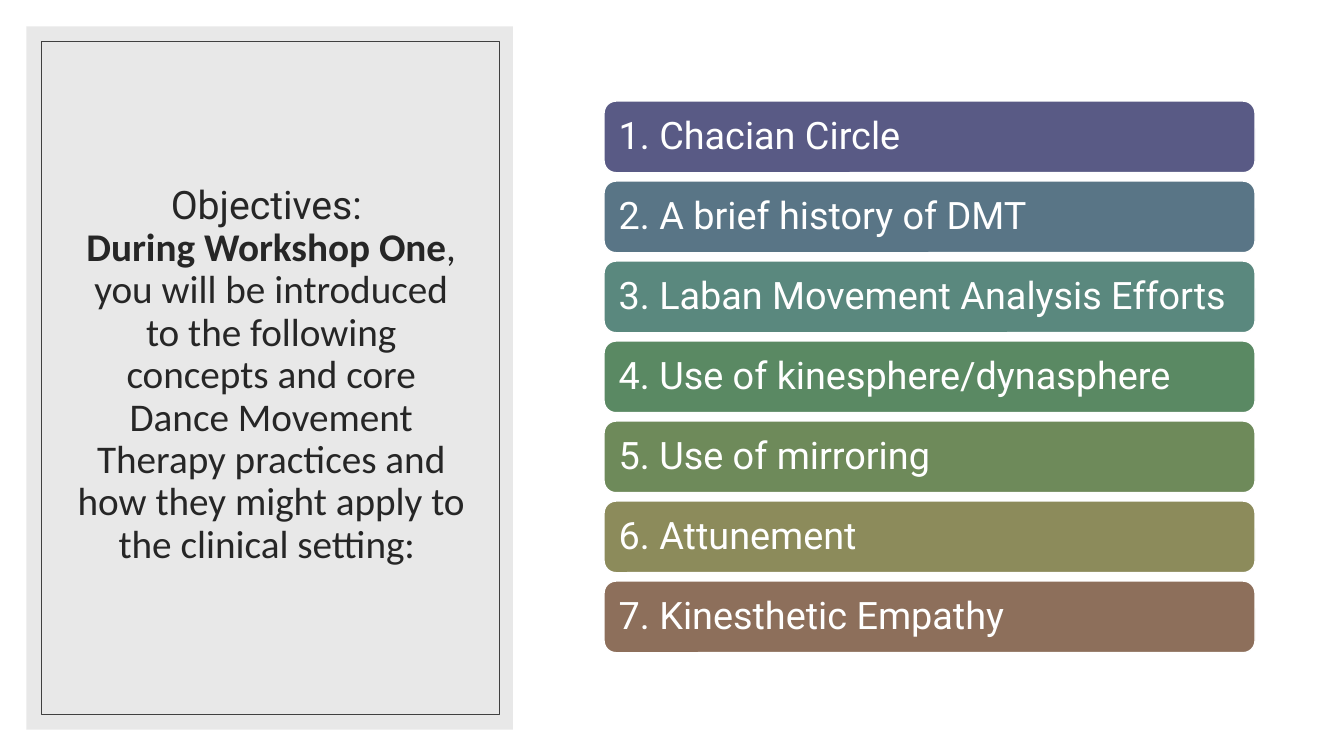
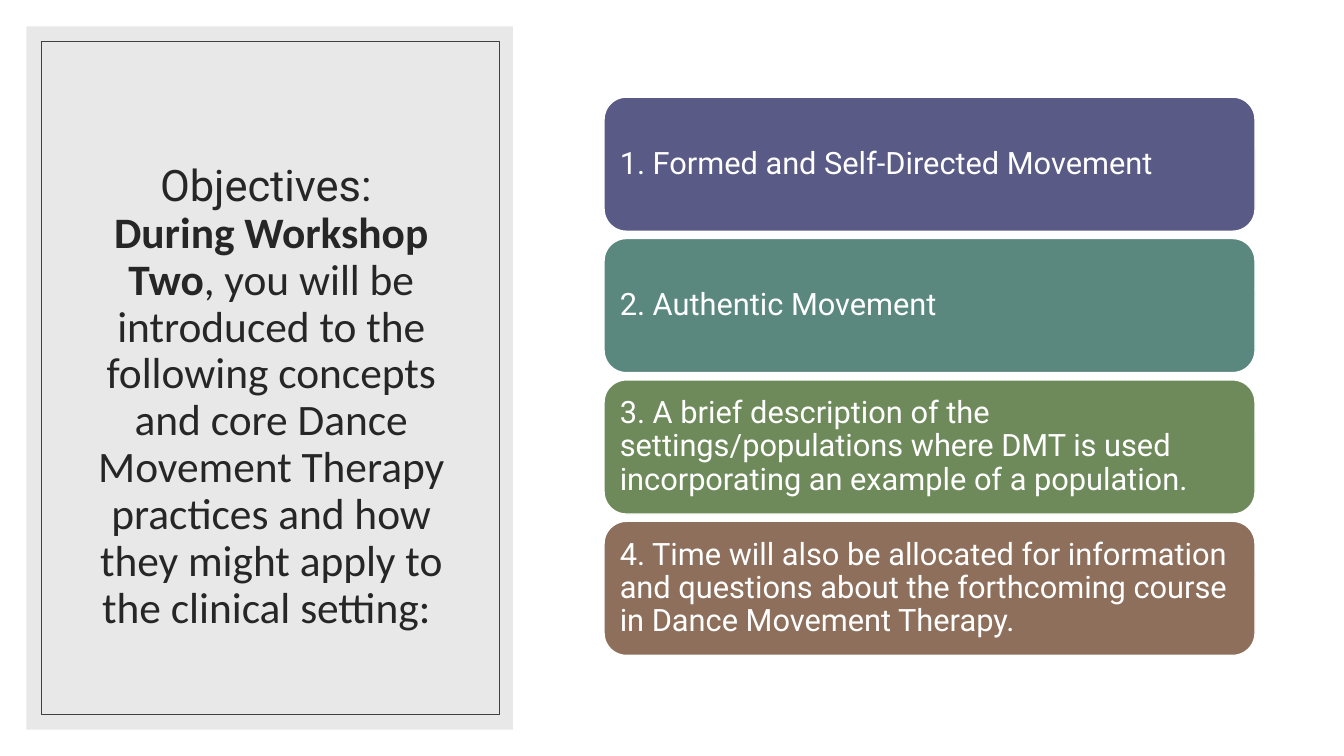
from lxml.etree import SubElement
from pptx import Presentation
from pptx.dml.color import RGBColor
from pptx.enum.shapes import MSO_SHAPE
from pptx.enum.text import MSO_ANCHOR, MSO_AUTO_SIZE, PP_ALIGN
from pptx.oxml.ns import qn
from pptx.util import Pt

COLORS = {
    "white": "FFFFFF",
    "panel": "D9D9D9",
    "frame": "404040",
    "title": "262626",
    "purple": "595A85",
    "blue": "597586",
    "teal": "5A887E",
    "green": "5A8963",
    "olive": "6E8A5A",
    "mustard": "8C8B5B",
    "brown": "8D6F5B",
}
HEADING_FONT, BODY_FONT = "Roboto", "Calibri"
TITLE_ONLY = 5
PANEL_BOX = (18.9, 18.9, 347.5, 502.3)
FRAME_BOX = (29.4, 29.4, 327, 481)
TITLE_BOX = (45.4, 43.9, 296.6, 449.3)
BAR_LEFT, BAR_WIDTH = 431.5, 465

INTRODUCTION = (
    ", you will be introduced to the following concepts and core Dance Movement "
    "Therapy practices and how they might apply to the clinical setting: "
)

WORKSHOPS = [
    {
        "name": "During Workshop One",
        "title_size": 28,
        "title_drop": 0,
        "bars": {"top": 72.2, "height": 51.2, "step": 57.14, "size": 27, "inset": 8},
        "objectives": [
            ("1. Chacian Circle", "purple"),
            ("2. A brief history of DMT", "blue"),
            ("3. Laban Movement Analysis Efforts", "teal"),
            ("4. Use of kinesphere/dynasphere", "green"),
            ("5. Use of mirroring", "olive"),
            ("6. Attunement", "mustard"),
            ("7. Kinesthetic Empathy", "brown"),
        ],
    },
    {
        "name": "During Workshop Two",
        "title_size": 31,
        "title_drop": 32,
        "bars": {"top": 69.4, "height": 95.8, "step": 101, "size": 22, "inset": 6.6},
        "objectives": [
            ("1. Formed and Self-Directed Movement", "purple"),
            ("2. Authentic Movement", "teal"),
            ("3. A brief description of the settings/populations where DMT is used "
             "incorporating an example of a population.", "olive"),
            ("4. Time will also be allocated for information and questions about the "
             "forthcoming course in Dance Movement Therapy.", "brown"),
        ],
    },
]


def rgb(color):
    return RGBColor.from_string(COLORS[color])


def apply_format(target, values):
    for attribute, value in values.items():
        setattr(target, attribute, value)


def place(shape, box):
    apply_format(shape, dict(zip(("left", "top", "width", "height"), map(Pt, box))))


def add_block(slide, kind, box, fill=None, line=None, line_width=1):
    block = slide.shapes.add_shape(kind, *map(Pt, box))
    block.shadow.inherit = False
    if fill:
        block.fill.solid()
        block.fill.fore_color.rgb = rgb(fill)
    else:
        block.fill.background()
    if line:
        block.line.color.rgb = rgb(line)
        block.line.width = Pt(line_width)
    else:
        block.line.fill.background()
    return block


def set_opacity(shape, percent):
    color = shape.element.spPr.find(qn("a:solidFill"))[0]
    SubElement(color, qn("a:alpha")).set("val", str(percent * 1000))


def add_run(paragraph, text, font, size, color, bold=False):
    run = paragraph.add_run()
    run.text = text
    apply_format(run.font, {"name": font, "size": Pt(size), "bold": bold})
    run.font.color.rgb = rgb(color)


def add_title(slide, workshop):
    """Fill the title placeholder; title_drop lowers its centred text."""
    title = slide.shapes.title
    place(title, TITLE_BOX)
    frame = title.text_frame
    apply_format(frame, {
        "word_wrap": True,
        "auto_size": MSO_AUTO_SIZE.NONE,
        "vertical_anchor": MSO_ANCHOR.MIDDLE,
        "margin_top": Pt(3.6 + workshop["title_drop"]),
    })
    heading, introduction = frame.paragraphs[0], frame.add_paragraph()
    for paragraph in (heading, introduction):
        apply_format(paragraph, {
            "alignment": PP_ALIGN.CENTER,
            "line_spacing": 0.9,
            "space_before": Pt(0),
        })
    size = workshop["title_size"]
    add_run(heading, "Objectives: ", HEADING_FONT, size, "title")
    add_run(introduction, workshop["name"], BODY_FONT, size, "title", bold=True)
    add_run(introduction, INTRODUCTION, BODY_FONT, size, "title")
    return title


def add_title_panel(slide, workshop):
    """Add the title between its grey panel and its thin frame."""
    title = add_title(slide, workshop)
    panel = add_block(slide, MSO_SHAPE.RECTANGLE, PANEL_BOX, fill="panel")
    set_opacity(panel, 60)
    title.element.addprevious(panel.element)
    add_block(slide, MSO_SHAPE.RECTANGLE, FRAME_BOX, line="frame", line_width=0.5)


def add_objective_bars(slide, objectives, bars):
    for index, (objective, color) in enumerate(objectives):
        box = (BAR_LEFT, bars["top"] + index * bars["step"], BAR_WIDTH, bars["height"])
        bar = add_block(slide, MSO_SHAPE.ROUNDED_RECTANGLE, box, color, "white")
        frame = bar.text_frame
        apply_format(frame, {"word_wrap": True, "vertical_anchor": MSO_ANCHOR.MIDDLE})
        for side in ("left", "top", "right", "bottom"):
            setattr(frame, f"margin_{side}", Pt(bars["inset"]))
        paragraph = frame.paragraphs[0]
        apply_format(paragraph, {"alignment": PP_ALIGN.LEFT, "line_spacing": 0.9})
        add_run(paragraph, objective, HEADING_FONT, bars["size"], "white")


def main():
    presentation = Presentation()
    apply_format(presentation, {"slide_width": Pt(960), "slide_height": Pt(540)})
    for workshop in WORKSHOPS:
        slide = presentation.slides.add_slide(presentation.slide_layouts[TITLE_ONLY])
        add_title_panel(slide, workshop)
        add_objective_bars(slide, workshop["objectives"], workshop["bars"])
    presentation.save("out.pptx")


if __name__ == "__main__":
    main()
